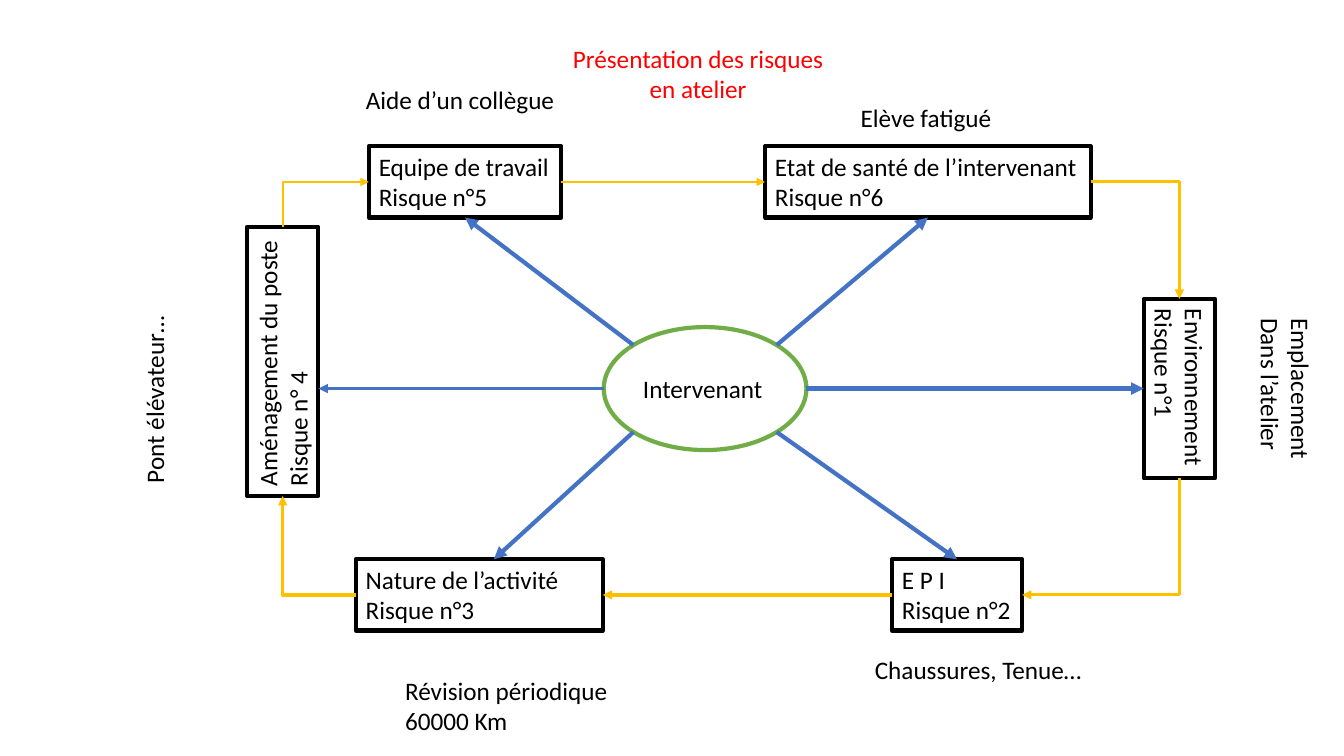
from dataclasses import dataclass
from math import cos, radians, sin, sqrt

from lxml.etree import SubElement
from pptx import Presentation
from pptx.dml.color import RGBColor
from pptx.enum.shapes import MSO_CONNECTOR, MSO_SHAPE
from pptx.enum.text import MSO_ANCHOR, MSO_AUTO_SIZE, PP_ALIGN
from pptx.oxml.ns import qn
from pptx.util import Inches, Pt


@dataclass(frozen=True)
class Theme:
    font: str = "Calibri"
    size: float = 18
    ink: str = "000000"
    paper: str = "FFFFFF"
    title: str = "FF0000"
    hub: str = "70AD47"
    spoke: str = "4472C4"
    cycle: str = "FFC000"
    thin: float = 1.5
    medium: float = 2.25
    thick: float = 3


THEME = Theme()
WIDTH, HEIGHT = Inches(13.333), Inches(7.5)
TOP, LEFT, BOTTOM, RIGHT = range(4)


# Grid: the slide has 100 columns and 100 rows
def columns(count):
    return round(WIDTH * count / 100)


def rows(count):
    return round(HEIGHT * count / 100)


def frame(column, row, length, lines):
    """Left, top, width and height of a text frame centred on a grid point."""
    width, height = columns(length), rows(1.35 + 4.04 * lines)
    return columns(column) - width // 2, rows(row) - height // 2, width, height


def color(code):
    return RGBColor.from_string(code)


# Text
def write(shape, lines, ink=THEME.ink, align=PP_ALIGN.LEFT, wrap=True):
    text = shape.text_frame
    text.word_wrap = wrap
    text.auto_size = MSO_AUTO_SIZE.SHAPE_TO_FIT_TEXT
    text.vertical_anchor = MSO_ANCHOR.TOP
    for index, line in enumerate(lines):
        para = text.add_paragraph() if index else text.paragraphs[0]
        para.alignment = align
        span = para.add_run()
        span.text = line
        span.font.name = THEME.font
        span.font.size = Pt(THEME.size)
        span.font.color.rgb = color(ink)


def add_title(page, column, row, length, text):
    title = page.shapes.title
    title.left, title.top, title.width, title.height = frame(column, row, length, 2)
    write(title, [text], THEME.title, PP_ALIGN.CENTER)


def add_label(page, column, row, length, lines, height=1, turn=0, wrap=True):
    label = page.shapes.add_textbox(*frame(column, row, length, height))
    label.rotation = turn
    write(label, lines, wrap=wrap)
    return label


# Shapes
def outline(shape, line):
    shape.shadow.inherit = False
    shape.fill.solid()
    shape.fill.fore_color.rgb = color(THEME.paper)
    shape.line.color.rgb = color(line)
    shape.line.width = Pt(THEME.thick)


def add_risk(page, column, row, length, lines, turn=0, wrap=False):
    box = page.shapes.add_shape(MSO_SHAPE.RECTANGLE, *frame(column, row, length, 2))
    box.rotation = turn
    outline(box, THEME.ink)
    write(box, lines, wrap=wrap)
    return box


def add_hub(page, column, row, width, height):
    hub = page.shapes.add_shape(
        MSO_SHAPE.OVAL, columns(column - width / 2), rows(row - height / 2),
        columns(width), rows(height))
    outline(hub, THEME.hub)
    return hub


# Points on shapes
def offset(shape, across, down):
    """Point at a share of the half width and half height, turned with the shape."""
    angle = radians(shape.rotation)
    x, y = across * shape.width / 2, down * shape.height / 2
    return (round(shape.left + shape.width / 2 + x * cos(angle) - y * sin(angle)),
            round(shape.top + shape.height / 2 + x * sin(angle) + y * cos(angle)))


def side(shape, site):
    return offset(shape, *((0, -1), (-1, 0), (0, 1), (1, 0))[site])


# Connectors
def add_arrow(page, start, end, line, weight, kind=MSO_CONNECTOR.STRAIGHT, tip="tailEnd"):
    arrow = page.shapes.add_connector(kind, *start, *end)
    arrow.line.color.rgb = color(line)
    arrow.line.width = Pt(weight)
    properties = arrow.element.spPr
    SubElement(properties.find(qn("a:ln")), qn("a:" + tip), type="triangle")
    SubElement(properties, qn("a:effectLst"))
    return arrow


def add_bend(page, start, end, weight, tip="tailEnd"):
    """One right angle: across first, then up or down."""
    bend = add_arrow(page, start, end, THEME.cycle, weight, MSO_CONNECTOR.ELBOW, tip)
    bend.element.spPr.find(qn("a:prstGeom")).set("prst", "bentConnector2")


def add_spoke(page, start, box, site):
    end = side(box, site)
    arrow = add_arrow(page, start, end, THEME.spoke, THEME.thick)
    arrow.end_connect(box, site)
    arrow.end_x, arrow.end_y = end  # joining ignores the turn of the box


def add_step(page, source, out, target, into, weight):
    arrow = add_arrow(page, side(source, out), side(target, into), THEME.cycle, weight)
    arrow.begin_connect(source, out)
    arrow.end_connect(target, into)


def main():
    deck = Presentation()
    deck.slide_width, deck.slide_height = WIDTH, HEIGHT
    page = deck.slides.add_slide(deck.slide_layouts[5])
    add_title(page, 51.94, 9.8, 20.33, "Présentation des risques en atelier")

    # Hub and the six risks around it
    hub = add_hub(page, 52.46, 51.4, 15.08, 16.27)
    add_label(page, 52.73, 51.4, 11.25, ["Intervenant"])
    place = add_risk(page, 87.75, 51.4, 13.35, ["Environnement", "Risque n°1"], turn=90)
    gear = add_risk(page, 71.21, 78.7, 9.68, ["E P I", "Risque n°2"])
    task = add_risk(page, 35.66, 78.7, 18.38, ["Nature de l’activité", "Risque n°3"], wrap=True)
    post = add_risk(page, 21.04, 47.8, 20.03, ["Aménagement du poste", "Risque n° 4"], turn=270)
    team = add_risk(page, 34.61, 24.07, 14.33, ["Equipe de travail", "Risque n°5"])
    health = add_risk(page, 69.04, 24.07, 24.23, ["Etat de santé de l’intervenant", "Risque n°6"])

    # Spokes from the hub
    slant = sqrt(0.5)
    add_spoke(page, offset(hub, -slant, -slant), team, TOP + BOTTOM)
    add_spoke(page, offset(hub, slant, -slant), health, BOTTOM)
    add_spoke(page, offset(hub, slant, slant), gear, TOP)
    add_spoke(page, side(hub, RIGHT), place, BOTTOM)
    add_arrow(page, offset(hub, -slant, slant), (columns(36.75), side(task, TOP)[1]),
              THEME.spoke, THEME.thick)
    hub_left = side(hub, LEFT)
    add_arrow(page, hub_left, (side(post, BOTTOM)[0], hub_left[1]), THEME.spoke, THEME.medium)

    # Cycle from risk to risk
    add_step(page, team, RIGHT, health, LEFT, THEME.thin)
    add_step(page, gear, LEFT, task, RIGHT, THEME.medium)
    add_bend(page, side(health, RIGHT), side(place, LEFT), THEME.medium)
    add_bend(page, side(gear, RIGHT), side(place, RIGHT), THEME.medium, "headEnd")
    add_bend(page, side(task, LEFT), side(post, LEFT), THEME.medium)
    add_bend(page, side(team, LEFT), side(post, RIGHT), THEME.thin, "headEnd")

    # Examples beside the risks
    add_label(page, 95.66, 56.07, 17.18, ["Emplacement", "Dans l’atelier"], height=2, turn=90)
    add_label(page, 72.9, 88.53, 17.1, ["Chaussures, Tenue…"], wrap=False)
    add_label(page, 38.59, 93.4, 18.38, ["Révision périodique 60000 Km"], height=2)
    add_label(page, 11.48, 50.4, 16.65, ["Pont élévateur…"], turn=270)
    add_label(page, 38.18, 13.2, 23.4, ["Aide d’un collègue"])
    add_label(page, 71.85, 15.6, 17.1, ["Elève fatigué"])

    deck.save("out.pptx")


if __name__ == "__main__":
    main()
